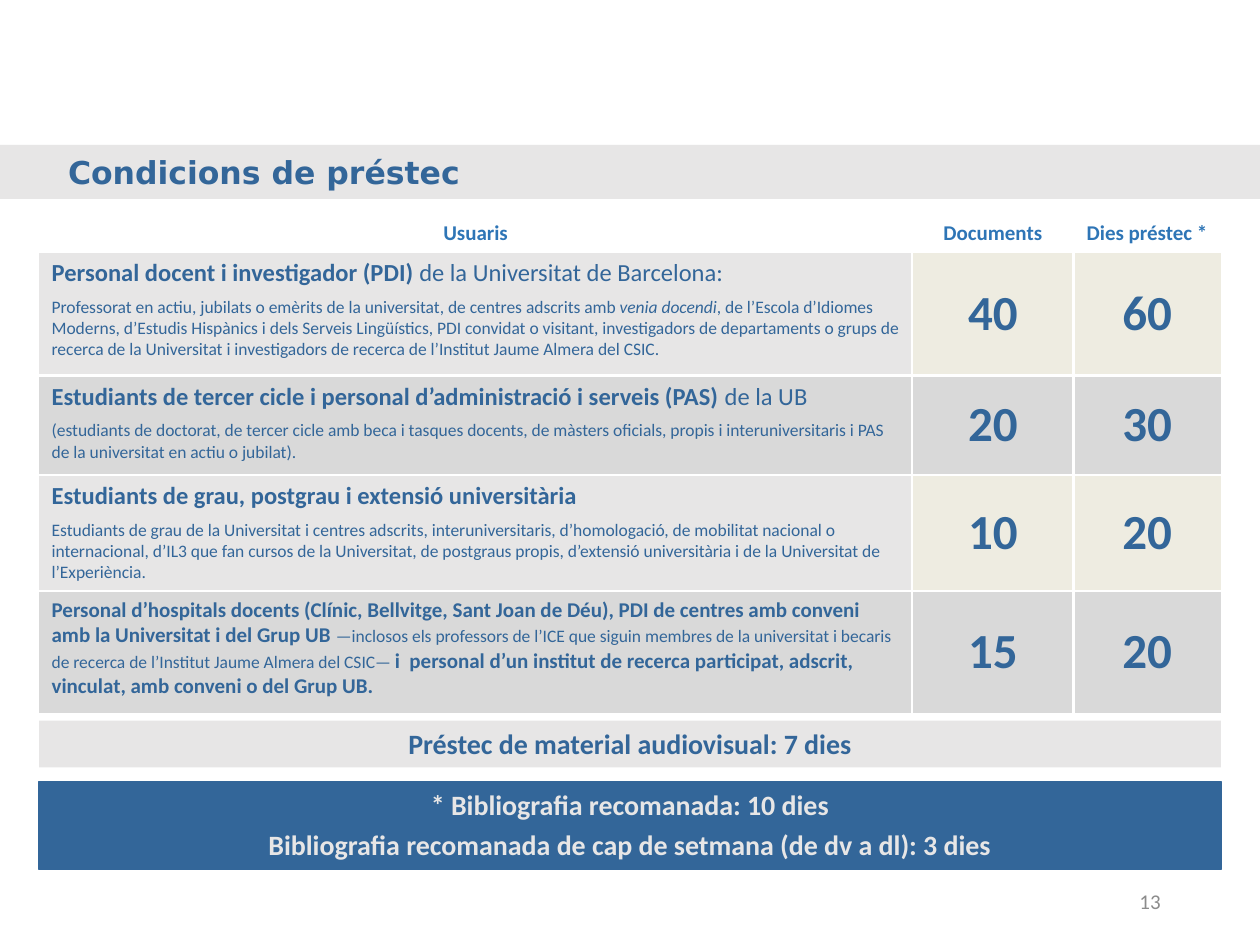
from pptx import Presentation
from pptx.dml.color import RGBColor
from pptx.enum.shapes import MSO_SHAPE
from pptx.enum.text import MSO_ANCHOR, PP_ALIGN
from pptx.oxml import parse_xml
from pptx.oxml.ns import nsdecls
from pptx.util import Inches, Pt

CENTER, LEFT, RIGHT = PP_ALIGN.CENTER, PP_ALIGN.LEFT, PP_ALIGN.RIGHT
TOP, MIDDLE = MSO_ANCHOR.TOP, MSO_ANCHOR.MIDDLE
WHITE = RGBColor(0xFF, 0xFF, 0xFF)
BLUE = RGBColor(0x33, 0x66, 0x99)
HEADER_BLUE = RGBColor(0x2E, 0x75, 0xB6)
LIGHT_GRAY = RGBColor(0xE7, 0xE6, 0xE6)
MID_GRAY = RGBColor(0xD9, 0xD9, 0xD9)
CREAM = RGBColor(0xEE, 0xEC, 0xE1)
NUMBER_GRAY = RGBColor(0x8C, 0x8C, 0x8C)
BODY_FONT, TITLE_FONT = "Calibri", "DejaVu Sans"

# Content: each run is (text, size, style), style being "b", "i" or ""
TITLE = "Condicions de préstec"
HEADERS = ["Usuaris", "Documents", "Dies préstec *"]
LOANS = [
    ([[("Personal docent i investigador (PDI) ", 14, "b"),
       ("de la Universitat de Barcelona:", 14, "")],
      [("Professorat en actiu, jubilats o emèrits de la universitat, de centres "
        "adscrits amb ", 10, ""),
       ("venia docendi", 10, "i"),
       (", de l’Escola d’Idiomes Moderns, d’Estudis Hispànics i dels Serveis "
        "Lingüístics, PDI convidat o visitant, investigadors de departaments o "
        "grups de recerca de la Universitat i investigadors de recerca de "
        "l’Institut Jaume Almera del CSIC.", 10, "")]], "40", "60"),
    ([[("Estudiants de tercer cicle i personal d’administració i serveis (PAS) ",
        14, "b"),
       ("de la UB", 14, "")],
      [("(estudiants de doctorat, de tercer cicle amb beca i tasques docents, de "
        "màsters oficials, propis i interuniversitaris i PAS de la universitat en "
        "actiu o jubilat).", 10, "")]], "20", "30"),
    ([[("Estudiants de grau, postgrau i extensió universitària", 14, "b")],
      [("Estudiants de grau de la Universitat i centres adscrits, "
        "interuniversitaris, d’homologació, de mobilitat nacional o "
        "internacional, d’IL3 que fan cursos de la Universitat, de postgraus "
        "propis, d’extensió universitària i de la Universitat de "
        "l’Experiència.", 10, "")]], "10", "20"),
    ([[("Personal d’hospitals docents (Clínic, Bellvitge, Sant Joan de Déu), PDI "
        "de centres amb conveni amb la Universitat i del Grup UB ", 12, "b"),
       ("—inclosos els professors de l’ICE que siguin membres de la universitat i "
        "becaris de recerca de l’Institut Jaume Almera del CSIC— ", 10, ""),
       ("i  personal d’un institut de recerca participat, adscrit, vinculat, amb "
        "conveni o del Grup UB.", 12, "b")]], "15", "20"),
]
AUDIOVISUAL = ["Préstec de material audiovisual: 7 dies"]
RECOMMENDED = ["* Bibliografia recomanada: 10 dies",
               "Bibliografia recomanada de cap de setmana (de dv a dl): 3 dies"]
PAGE_NUMBER = "13"

# Layout in inches
SLIDE_W, SLIDE_H = 10, 7.5
MARGIN = 0.31
CONTENT_W = SLIDE_W - 2 * MARGIN
TABLE_TOP = 1.7
COLUMNS = [6.93, 1.28, 1.17]
ROWS = [0.3, 0.98, 0.79, 0.92, 0.97]

prs = Presentation()
prs.slide_width, prs.slide_height = Inches(SLIDE_W), Inches(SLIDE_H)
slide = prs.slides.add_slide(prs.slide_layouts[6])


def write(frame, paragraphs, color, align=LEFT, gap=0, font=BODY_FONT):
    frame.word_wrap = True
    for i, runs in enumerate(paragraphs):
        p = frame.add_paragraph() if i else frame.paragraphs[0]
        p.alignment = align
        if i:
            p.space_before = Pt(gap)
        for text, size, style in runs:
            run = p.add_run()
            run.text = text
            run.font.name, run.font.size = font, Pt(size)
            run.font.bold, run.font.italic = style == "b", style == "i"
            run.font.color.rgb = color


def band(left, top, width, height, fill):
    shape = slide.shapes.add_shape(MSO_SHAPE.RECTANGLE, Inches(left), Inches(top),
                                   Inches(width), Inches(height))
    shape.shadow.inherit = False
    shape.fill.solid()
    shape.fill.fore_color.rgb = fill
    shape.line.fill.background()
    return shape


def note(top, height, lines, fill, color):
    shape = band(MARGIN, top, CONTENT_W, height, fill)
    shape.text_frame.vertical_anchor = TOP
    write(shape.text_frame, [[(line, 16, "b")] for line in lines], color, CENTER, gap=4)
    return shape


def inner_borders(cell, row, col):
    """White rules on the sides that face another cell."""
    sides = {"lnL": row and col, "lnR": row and col < len(COLUMNS) - 1,
             "lnT": row, "lnB": row < len(ROWS) - 1}
    for tag, ruled in sides.items():
        paint = f'<a:solidFill><a:srgbClr val="{WHITE}"/></a:solidFill>'
        cell._tc.get_or_add_tcPr().append(parse_xml(
            f'<a:{tag} {nsdecls("a")} w="{Pt(1.5)}">'
            f'{paint if ruled else "<a:noFill/>"}</a:{tag}>'))


# Page number
number_box = slide.shapes.add_textbox(Inches(7.06), Inches(6.95), Inches(2.25), Inches(0.4))
number_box.text_frame.vertical_anchor = MIDDLE
write(number_box.text_frame, [[(PAGE_NUMBER, 12, "")]], NUMBER_GRAY, RIGHT)

# Title band
title = band(0, 1.15, SLIDE_W, 0.43, LIGHT_GRAY).text_frame
title.margin_left = Inches(0.54)
title.vertical_anchor = MIDDLE
write(title, [[(TITLE, 18, "b")]], BLUE, font=TITLE_FONT)

# Loan table
table = slide.shapes.add_table(len(ROWS), len(COLUMNS), Inches(MARGIN), Inches(TABLE_TOP),
                               Inches(CONTENT_W), Inches(sum(ROWS))).table
table.first_row = table.horz_banding = False
for column, width in zip(table.columns, COLUMNS):
    column.width = Inches(width)
for table_row, height in zip(table.rows, ROWS):
    table_row.height = Inches(height)

for c, header in enumerate(HEADERS):
    cell = table.cell(0, c)
    inner_borders(cell, 0, c)
    cell.fill.background()
    cell.vertical_anchor = MIDDLE
    write(cell.text_frame, [[(header, 12, "b")]], HEADER_BLUE, CENTER)

for r, (users, *figures) in enumerate(LOANS, start=1):
    users_fill, figure_fill = (LIGHT_GRAY, CREAM) if r % 2 else (MID_GRAY, MID_GRAY)
    for c in range(len(COLUMNS)):
        cell = table.cell(r, c)
        inner_borders(cell, r, c)
        cell.fill.solid()
        cell.fill.fore_color.rgb = figure_fill if c else users_fill
        cell.vertical_anchor = MIDDLE if c else TOP
        if c:
            write(cell.text_frame, [[(figures[c - 1], 28, "b")]], BLUE, CENTER)
        else:
            write(cell.text_frame, users, BLUE, gap=5)

# Notes under the table
recommended = note(6.2, 0.7, RECOMMENDED, BLUE, LIGHT_GRAY)
recommended.line.color.rgb = BLUE
recommended.line.width = Pt(0.75)
note(5.72, 0.37, AUDIOVISUAL, LIGHT_GRAY, BLUE)

prs.save("out.pptx")
